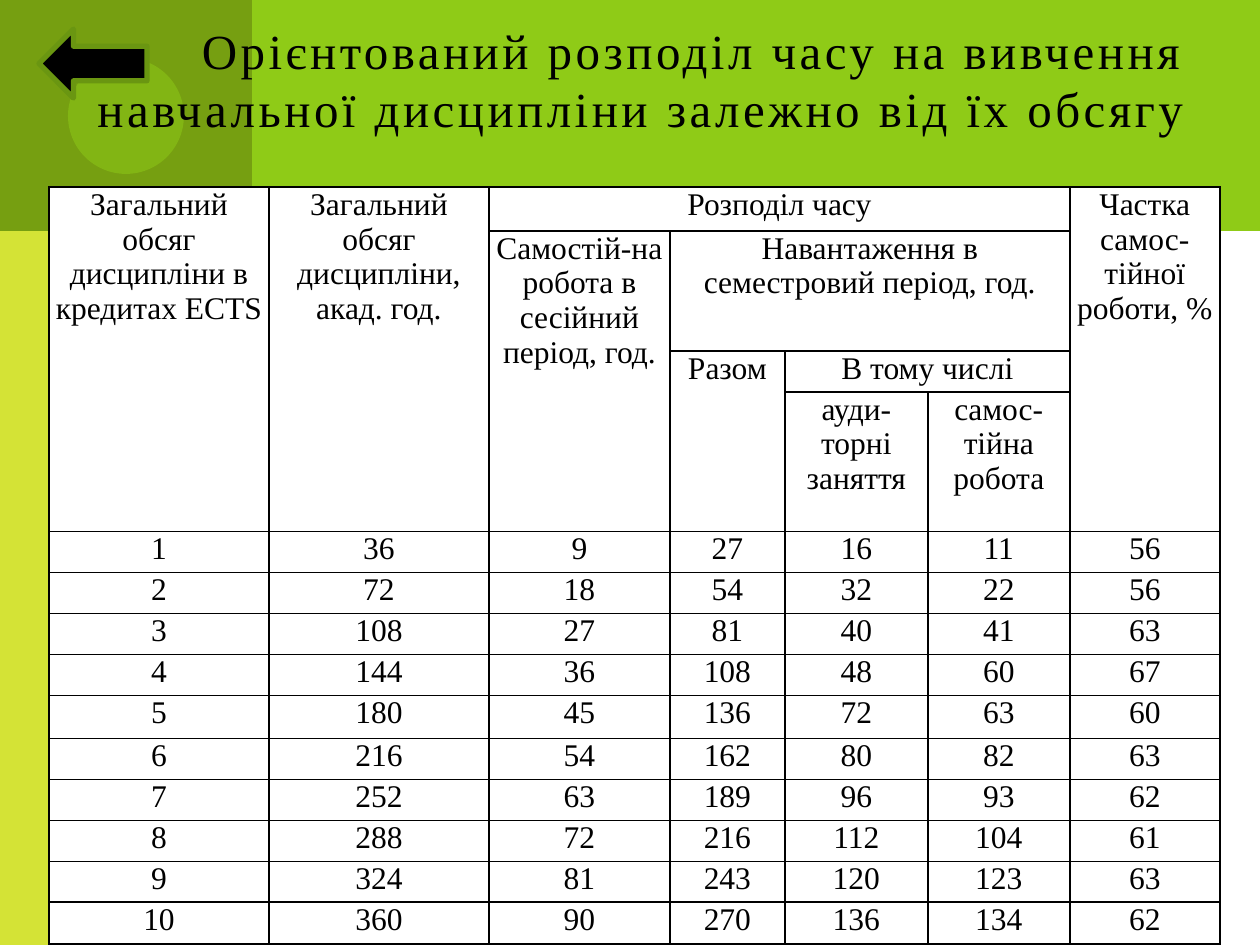
from lxml.etree import SubElement
from pptx import Presentation
from pptx.dml.color import RGBColor
from pptx.enum.shapes import MSO_SHAPE as Shape
from pptx.enum.text import MSO_ANCHOR as Anchor, MSO_AUTO_SIZE as AutoSize, PP_ALIGN as Align
from pptx.oxml.ns import qn
from pptx.util import Pt

SCALE = 914400 / 126
COLORS = {
    "lime": "8FCB17",
    "yellow": "D4E336",
    "olive": "769F11",
    "arrow_edge": "6A9611",
    "black": "000000",
    "white": "FFFFFF",
}


def px(length):
    return round(length * SCALE)


def write(frame, text, size, align, anchor, margins, spacing=None):
    frame.word_wrap = True
    frame.vertical_anchor = anchor
    frame.margin_left, frame.margin_top, frame.margin_right, frame.margin_bottom = map(px, margins)
    para = frame.paragraphs[0]
    para.alignment = align
    span = para.add_run()
    span.text = text
    span.font.name = "Times New Roman"
    span.font.size = Pt(size)
    span.font.color.rgb = RGBColor.from_string(COLORS["black"])
    if spacing:
        span.font._element.set("spc", str(spacing * 100))


deck = Presentation()
deck.slide_width, deck.slide_height = px(1260), px(945)
page = deck.slides.add_slide(deck.slide_layouts[5])

title = page.shapes.title
title.left, title.top, title.width, title.height = map(px, (78, 59, 1119, 157))
title.text_frame.auto_size = AutoSize.NONE
write(
    title.text_frame,
    "Орієнтований розподіл часу на вивчення навчальної дисципліни залежно від їх обсягу",
    size=28, align=Align.RIGHT, anchor=Anchor.MIDDLE, margins=(12, 0, 12, 117), spacing=2,
)

backdrop = [
    (Shape.RECTANGLE, (63, 0, 1197, 231), "lime"),
    (Shape.RECTANGLE, (0, 0, 252, 945), "yellow"),
    (Shape.RECTANGLE, (0, 0, 252, 231), "olive"),
    (Shape.OVAL, (68, 58, 116, 116), "lime"),
]
for kind, place, color in backdrop:
    box = page.shapes.add_shape(kind, *map(px, place))
    box.shadow.inherit = False
    box.fill.solid()
    box.fill.fore_color.rgb = RGBColor.from_string(COLORS[color])
    box.line.fill.background()
    title._element.addprevious(box._element)
    if kind == Shape.OVAL:
        tint = box._element.spPr.find(qn("a:solidFill"))[0]
        SubElement(tint, qn("a:alpha"), val="50000")

column_widths = [220, 220, 181, 115, 143, 142, 150]
row_heights = [44, 120, 41, 139, 41, 41, 41, 41, 43, 41, 41, 41, 41, 42]
headers = [
    (0, 0, 4, 1, "Загальний обсяг дисципліни в кредитах ЕСТS"),
    (0, 1, 4, 1, "Загальний обсяг дисципліни, акад. год."),
    (0, 2, 1, 4, "Розподіл часу"),
    (0, 6, 4, 1, "Частка самос-тійної роботи, %"),
    (1, 2, 3, 1, "Самостій-на робота в сесійний період, год."),
    (1, 3, 1, 3, "Навантаження в семестровий період, год."),
    (2, 3, 2, 1, "Разом"),
    (2, 4, 1, 2, "В тому числі"),
    (3, 4, 1, 1, "ауди-торні заняття"),
    (3, 5, 1, 1, "cамос-тійна робота"),
]
hours = [
    (1, 36, 9, 27, 16, 11, 56),
    (2, 72, 18, 54, 32, 22, 56),
    (3, 108, 27, 81, 40, 41, 63),
    (4, 144, 36, 108, 48, 60, 67),
    (5, 180, 45, 136, 72, 63, 60),
    (6, 216, 54, 162, 80, 82, 63),
    (7, 252, 63, 189, 96, 93, 62),
    (8, 288, 72, 216, 112, 104, 61),
    (9, 324, 81, 243, 120, 123, 63),
    (10, 360, 90, 270, 136, 134, 62),
]

table = page.shapes.add_table(
    len(row_heights), len(column_widths),
    px(49), px(187), px(sum(column_widths)), px(sum(row_heights)),
).table
table.first_row = table.horz_banding = False
for column, width in zip(table.columns, column_widths):
    column.width = px(width)
for row, height in zip(table.rows, row_heights):
    row.height = px(height)

for cell in table.iter_cells():
    properties = cell._tc.get_or_add_tcPr()
    for side in ("lnL", "lnR", "lnT", "lnB"):
        border = SubElement(properties, qn(f"a:{side}"), w=str(Pt(1)))
        paint = SubElement(border, qn("a:solidFill"))
        SubElement(paint, qn("a:srgbClr"), val=COLORS["black"])
    cell.fill.solid()
    cell.fill.fore_color.rgb = RGBColor.from_string(COLORS["white"])
    cell.margin_left = cell.margin_right = px(4)
    cell.margin_top = cell.margin_bottom = 0

entries = headers + [
    (row, column, 1, 1, str(value))
    for row, values in enumerate(hours, start=4)
    for column, value in enumerate(values)
]
for row, column, rows, columns, text in entries:
    cell = table.cell(row, column)
    if rows * columns > 1:
        cell.merge(table.cell(row + rows - 1, column + columns - 1))
    write(cell.text_frame, text, size=18, align=Align.CENTER, anchor=Anchor.TOP, margins=(4, 0, 4, 0))
    body = cell._tc.txBody.bodyPr
    body.attrib.clear()

arrow = page.shapes.add_shape(Shape.LEFT_ARROW, *map(px, (39, 29, 108, 69)))
arrow.shadow.inherit = False
arrow.fill.solid()
arrow.fill.fore_color.rgb = RGBColor.from_string(COLORS["black"])
arrow.line.color.rgb = RGBColor.from_string(COLORS["arrow_edge"])
arrow.line.width = Pt(3)

deck.save("out.pptx")
